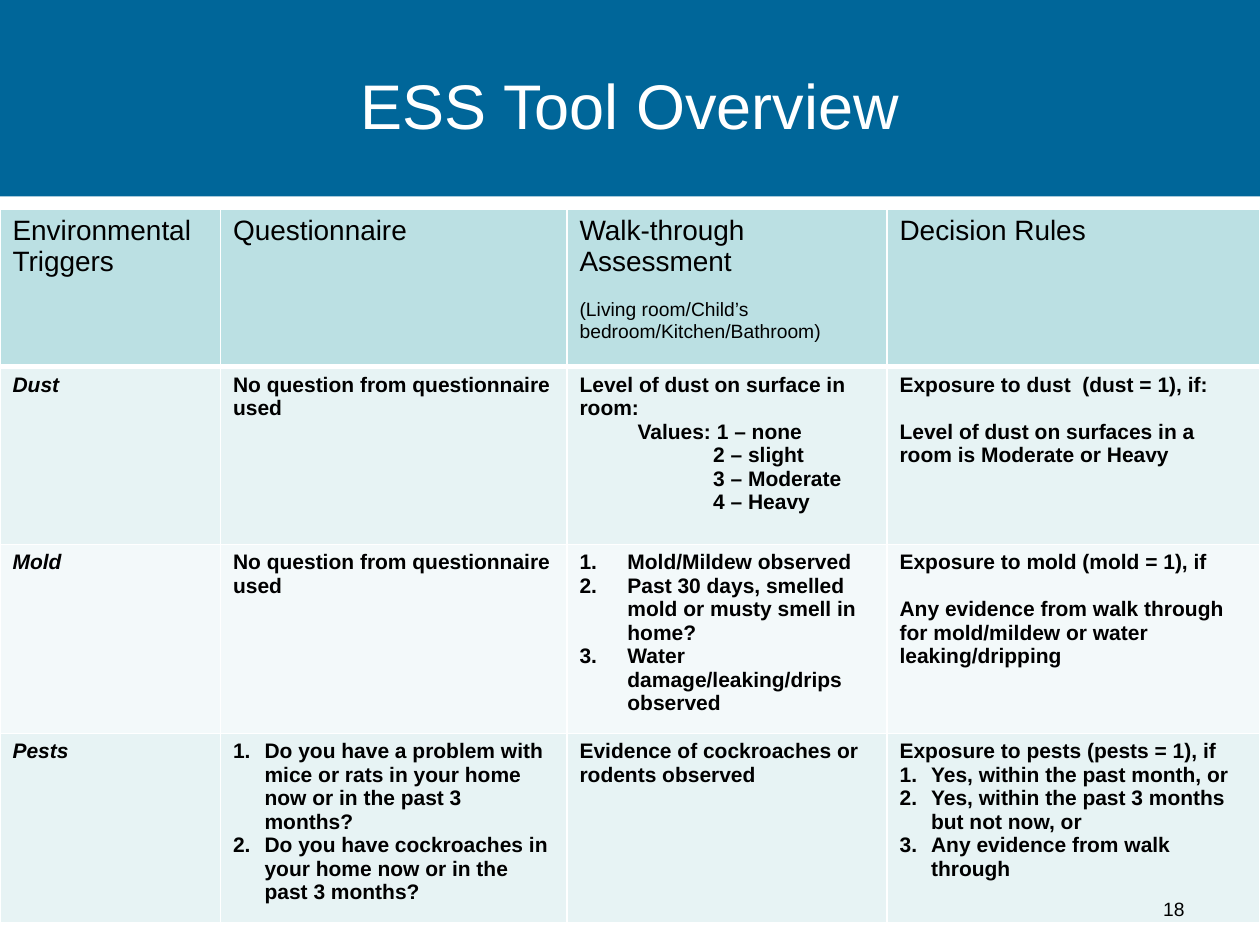
from dataclasses import dataclass

import pptx
import pptx.dml.color
import pptx.enum.shapes
import pptx.enum.text
import pptx.oxml.ns
import pptx.util
from lxml import etree

Inches = pptx.util.Inches
Pt = pptx.util.Pt
RGBColor = pptx.dml.color.RGBColor
Align = pptx.enum.text.PP_ALIGN
Anchor = pptx.enum.text.MSO_ANCHOR

WHITE = RGBColor(0xFF, 0xFF, 0xFF)
BLACK = RGBColor(0x00, 0x00, 0x00)
BLUE = RGBColor(0x00, 0x66, 0x99)
HEADER_TEAL = RGBColor(0xBB, 0xE0, 0xE3)
BAND_DARK = RGBColor(0xE7, 0xF3, 0xF4)
BAND_LIGHT = RGBColor(0xF3, 0xF9, 0xFA)
FONT = "Arial"


@dataclass
class Line:
    """One paragraph of a table cell."""

    text: str
    size: float = 12
    before: float = 0
    indent: float = 0
    numbered: bool = False


def numbered(indent, *texts):
    """Return numbered lines that hang by the indent."""
    return [Line(text, indent=indent, numbered=True) for text in texts]


NO_QUESTION = [Line("No question from questionnaire used")]
HEADER = [
    [Line("Environmental Triggers", 16)],
    [Line("Questionnaire", 16)],
    [Line("Walk-through Assessment", 16),
     Line("(Living room/Child’s bedroom/Kitchen/Bathroom)", 11, before=12.4)],
    [Line("Decision Rules", 16)],
]
DUST = [
    [Line("Dust")],
    NO_QUESTION,
    [Line("Level of dust on surface in room:"),
     Line("Values: 1 – none", indent=0.46),
     *[Line(level, indent=1.06) for level in ("2 – slight", "3 – Moderate", "4 – Heavy")]],
    [Line("Exposure to dust  (dust = 1), if:"),
     Line("Level of dust on surfaces in a room is Moderate or Heavy", before=13.5)],
]
MOLD = [
    [Line("Mold")],
    NO_QUESTION,
    numbered(0.38, "Mold/Mildew observed",
             "Past 30 days, smelled mold or musty smell in home?",
             "Water damage/leaking/drips observed"),
    [Line("Exposure to mold (mold = 1), if"),
     Line("Any evidence from walk through for mold/mildew or water leaking/dripping",
          before=13.5)],
]
PESTS = [
    [Line("Pests")],
    numbered(0.25,
             "Do you have a problem with mice or rats in your home now or in the past 3 months?",
             "Do you have cockroaches in your home now or in the past 3 months?"),
    [Line("Evidence of cockroaches or rodents observed")],
    [Line("Exposure to pests (pests = 1), if"),
     *numbered(0.25, "Yes, within the past month, or",
               "Yes, within the past 3 months but not now, or",
               "Any evidence from walk through")],
]
COLUMN_WIDTHS = [1.75, 2.75, 2.54, 2.96]
ROW_HEIGHTS = [1.25, 1.41, 1.41, 1.41]
ROW_FILLS = [HEADER_TEAL, BAND_DARK, BAND_LIGHT, BAND_DARK]


def add_label(slide, box, text, size, color, align, anchor):
    """Place a single line of text in the box."""
    label = slide.shapes.add_textbox(*map(Inches, box))
    frame = label.text_frame
    frame.word_wrap = True
    frame.vertical_anchor = anchor
    paragraph = frame.paragraphs[0]
    paragraph.text = text
    paragraph.alignment = align
    style_font(paragraph.font, size, color)


def style_font(font, size, color):
    """Set the typeface, size and colour of a font."""
    font.name = FONT
    font.size = Pt(size)
    font.color.rgb = color


def add_title_band(slide, left, top, width, height):
    """Draw the blue band with the title inside it."""
    band = slide.shapes.add_shape(
        pptx.enum.shapes.MSO_SHAPE.RECTANGLE, *map(Inches, (left, top, width, height)))
    band.shadow.inherit = False
    band.fill.solid()
    band.fill.fore_color.rgb = BLUE
    band.line.fill.background()
    add_label(slide, (left + 0.5, top + 0.22, 9, 1.22), "ESS Tool Overview",
              36, WHITE, Align.CENTER, Anchor.MIDDLE)


def set_borders(cell, widths):
    """Draw white cell borders with a width in points for each side."""
    properties = cell._tc.get_or_add_tcPr()
    for position, (side, width) in enumerate(widths.items()):
        border = etree.Element(pptx.oxml.ns.qn("a:ln" + side), w=str(Pt(width)))
        fill = etree.SubElement(border, pptx.oxml.ns.qn("a:solidFill"))
        etree.SubElement(fill, pptx.oxml.ns.qn("a:srgbClr"), val=str(WHITE))
        properties.insert(position, border)


def fill_cell(cell, lines, fill, bold, italic):
    """Write the lines into a cell and colour it."""
    cell.fill.solid()
    cell.fill.fore_color.rgb = fill
    for index, line in enumerate(lines):
        frame = cell.text_frame
        paragraph = frame.add_paragraph() if index else frame.paragraphs[0]
        paragraph.text = line.text
        paragraph.space_before = Pt(line.before)
        style_font(paragraph.font, line.size, BLACK)
        paragraph.font.bold = bold
        paragraph.font.italic = italic
        properties = paragraph._p.get_or_add_pPr()
        if line.indent:
            properties.set("marL", str(Inches(line.indent)))
        if line.numbered:
            properties.set("indent", str(-Inches(line.indent)))
            numbering = etree.Element(pptx.oxml.ns.qn("a:buAutoNum"), type="arabicPeriod")
            properties.find(pptx.oxml.ns.qn("a:defRPr")).addprevious(numbering)


def add_trigger_table(slide, left, top, width, height):
    """Build the table of triggers and how each is assessed."""
    rows = [HEADER, DUST, MOLD, PESTS]
    table = slide.shapes.add_table(
        len(rows), len(COLUMN_WIDTHS), *map(Inches, (left, top, width, height))).table
    for column, column_width in zip(table.columns, COLUMN_WIDTHS):
        column.width = Inches(column_width)
    for r, (row, row_height, fill) in enumerate(zip(rows, ROW_HEIGHTS, ROW_FILLS)):
        table.rows[r].height = Inches(row_height)
        for c, lines in enumerate(row):
            cell = table.cell(r, c)
            fill_cell(cell, lines, fill, bold=r > 0, italic=r > 0 and c == 0)
            set_borders(cell, {"L": 1, "R": 1, "T": 3 if r == 1 else 1, "B": 3 if r == 0 else 1})


def main():
    """Build and save the slide."""
    deck = pptx.Presentation()
    deck.slide_width, deck.slide_height = Inches(10), Inches(7.5)
    slide = deck.slides.add_slide(deck.slide_layouts[6])
    add_title_band(slide, 0, 0, 10.02, 1.56)
    add_trigger_table(slide, 0, 1.66, sum(COLUMN_WIDTHS), sum(ROW_HEIGHTS))
    add_label(slide, (7.17, 6.83, 2.33, 0.52), "18", 11, BLACK, Align.RIGHT, Anchor.BOTTOM)
    deck.save("out.pptx")


if __name__ == "__main__":
    main()
